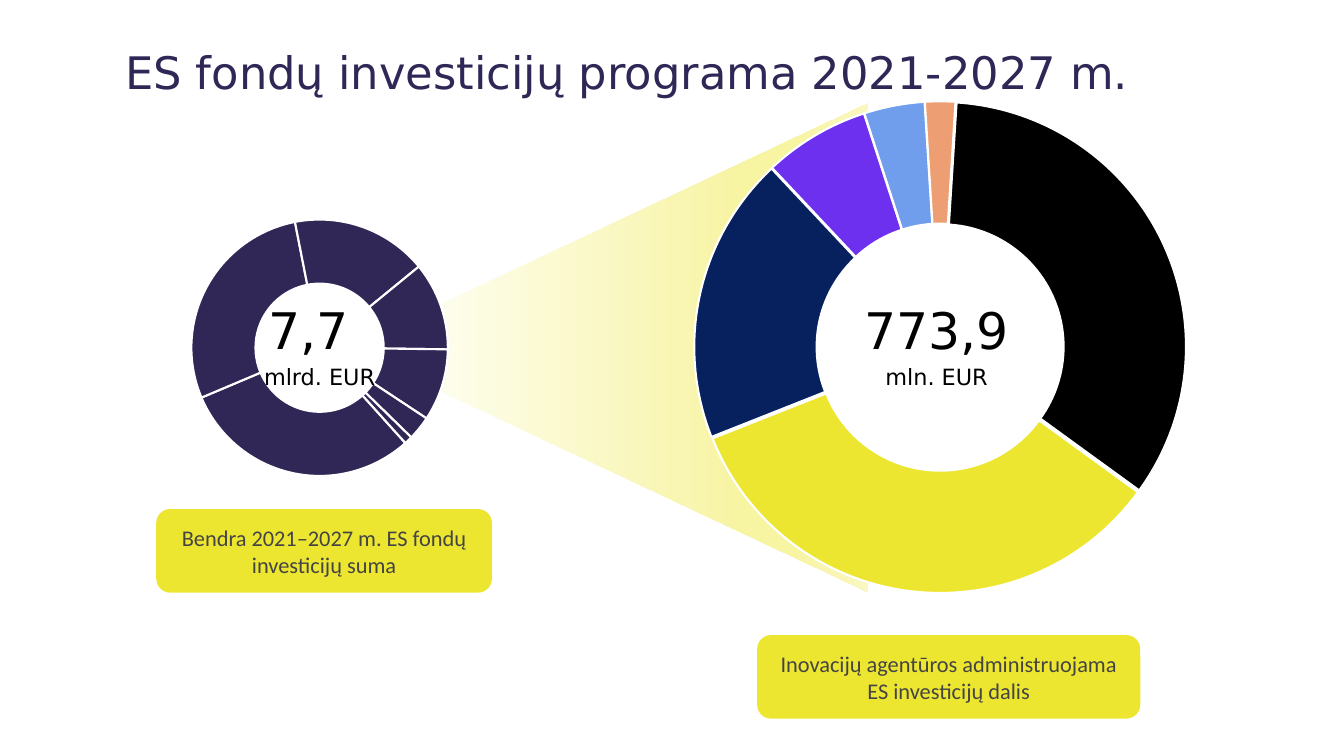
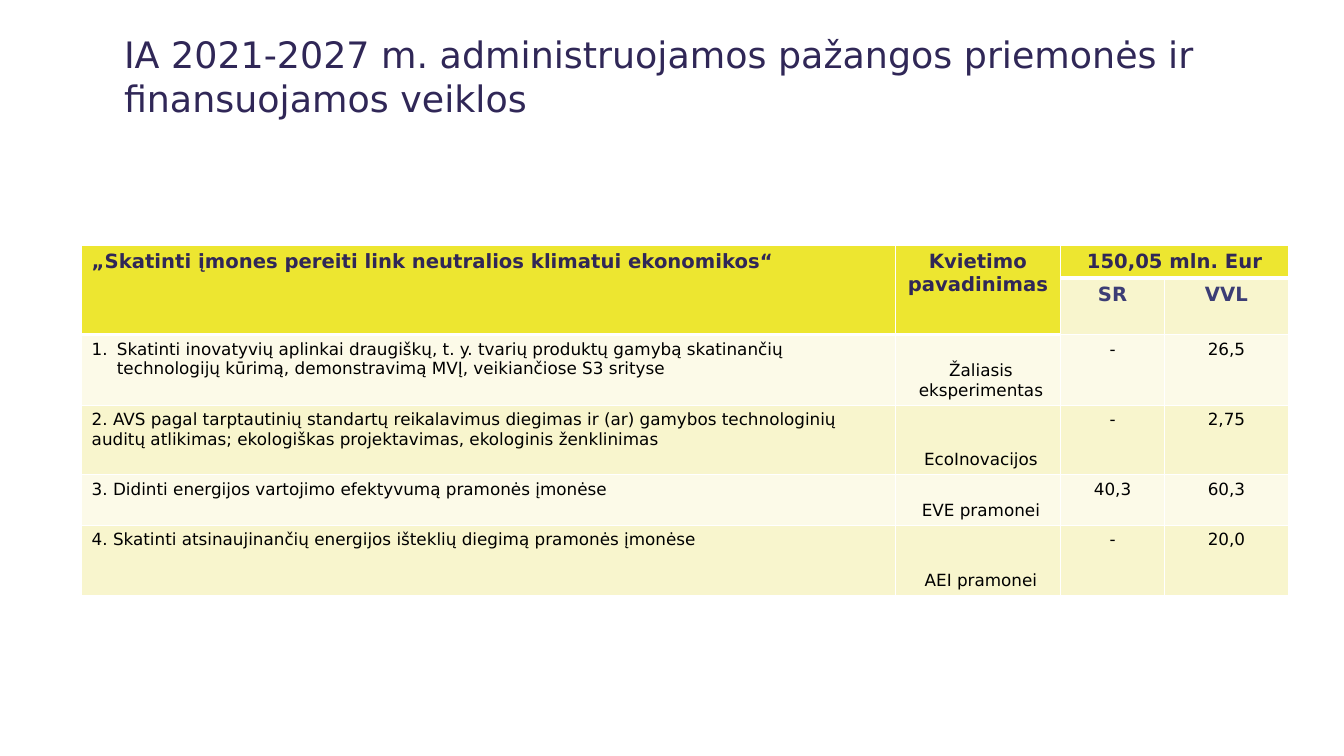
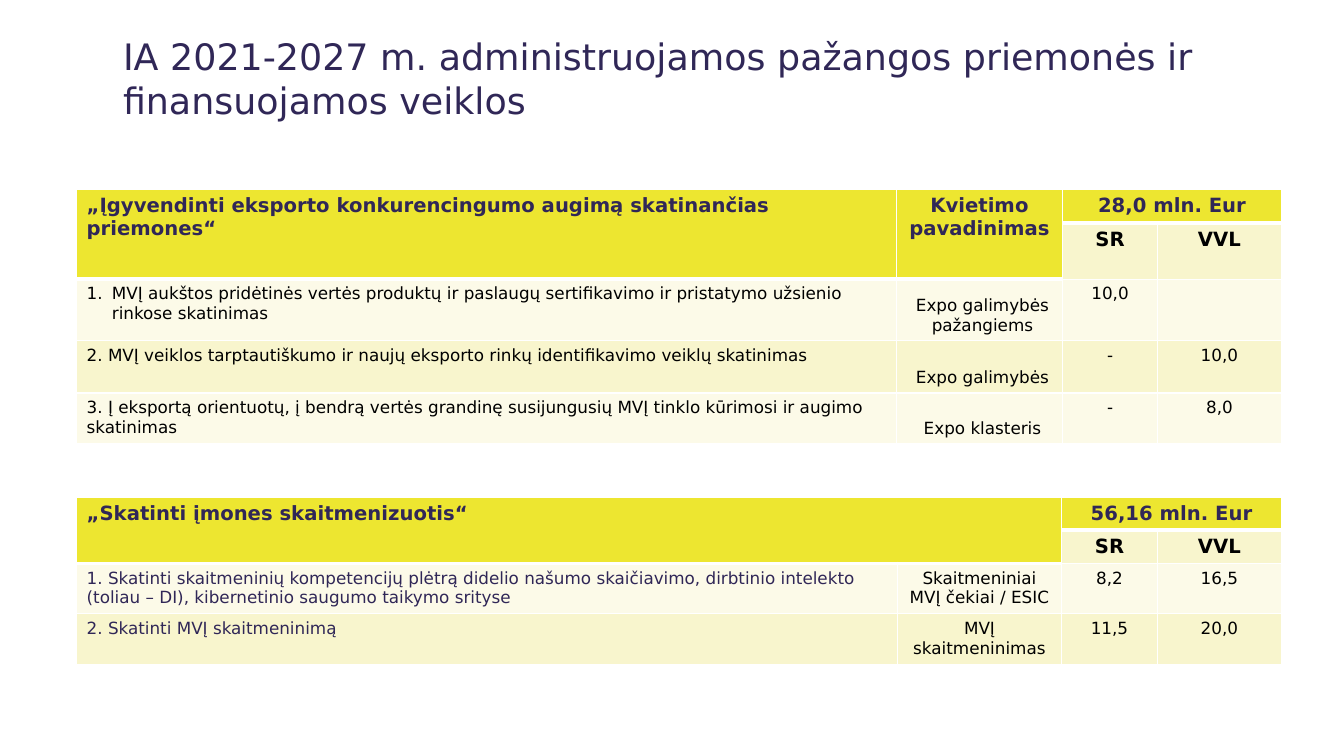
from dataclasses import dataclass

from lxml import etree
from pptx import Presentation
from pptx.chart.data import CategoryChartData
from pptx.dml.color import RGBColor
from pptx.enum.chart import XL_CHART_TYPE
from pptx.enum.shapes import MSO_SHAPE
from pptx.enum.text import MSO_ANCHOR, MSO_AUTO_SIZE, PP_ALIGN
from pptx.oxml.ns import qn
from pptx.util import Pt

PX = 9144  # EMU per px, 100 px to the inch


@dataclass(frozen=True)
class Theme:
    sans: str = "DejaVu Sans"
    label_font: str = "Calibri"
    navy: str = "302757"
    indigo: str = "3C3D75"
    yellow: str = "EDE630"
    band_dark: str = "F8F5CD"
    band_light: str = "FCFAE8"
    grey: str = "444444"
    black: str = "000000"
    white: str = "FFFFFF"
    beam: tuple = ((0, "FEFEF5"), (74, "F7F4A2"), (83, "F7F4A2"), (100, "FAF7C1"))
    shares: tuple = ("EDE630", "07215E", "6C30EE", "709DEC", "ED9E72", "000000")
    title: int = 26
    title_large: int = 32
    figure: int = 36
    figure_gap: int = 48
    label: int = 16
    head: int = 14
    body: int = 12
    chart: int = 10


T = Theme()


def box(*lengths):
    return [n * PX for n in lengths]


def rgb(hex_color):
    return RGBColor.from_string(hex_color)


def child(parent, tag, **attrs):
    return etree.SubElement(parent, qn(tag), {k: str(v) for k, v in attrs.items()})


def add_text(p, text, size=T.body, color=T.black, font=T.sans, bold=False, align=PP_ALIGN.LEFT):
    p.alignment = align
    r = p.add_run()
    r.text = text
    r.font.name, r.font.size, r.font.bold = font, Pt(size), bold
    r.font.color.rgb = rgb(color)


def number_item(p):
    pPr = p._p.get_or_add_pPr()
    pPr.set("marL", "228600")
    pPr.set("indent", "-228600")
    child(pPr, "a:buAutoNum", type="arabicPeriod")


def cell_borders(cell, bottom):
    tcPr = cell._tc.get_or_add_tcPr()
    for i, side in enumerate("LRTB"):
        width = bottom if side == "B" else 1
        ln = child(tcPr, f"a:ln{side}", w=Pt(width))
        child(child(ln, "a:solidFill"), "a:srgbClr", val=T.white)
        tcPr.insert(i, ln)


class Deck:
    def __init__(self):
        self.prs = Presentation()
        self.prs.slide_width, self.prs.slide_height = box(1333, 750)
        self.s = None

    def slide(self, title, x, y, width, size=T.title):
        self.s = self.prs.slides.add_slide(self.prs.slide_layouts[5])
        sp = self.s.shapes.title
        sp.left, sp.top, sp.width, sp.height = box(x, y, width, 97)
        tf = sp.text_frame
        tf.auto_size, tf.word_wrap = MSO_AUTO_SIZE.NONE, True
        tf.vertical_anchor = MSO_ANCHOR.TOP
        add_text(tf.paragraphs[0], title, size=size, color=T.navy)

    def shape(self, kind, at, fill=None):
        sp = self.s.shapes.add_shape(kind, *box(*at))
        sp.shadow.inherit = False
        sp.line.fill.background()
        if fill:
            sp.fill.solid()
            sp.fill.fore_color.rgb = rgb(fill)
        return sp

    def beam(self, at):
        sp = self.shape(MSO_SHAPE.TRAPEZOID, at)
        sp.adjustments[0] = 0.47
        sp.rotation = 270
        sp.fill.gradient()
        sp.fill.gradient_angle = 270
        stops = sp._element.spPr.find(".//" + qn("a:gsLst"))
        for gs in list(stops):
            stops.remove(gs)
        for pos, color in T.beam:
            child(child(stops, "a:gs", pos=pos * 1000), "a:srgbClr", val=color)

    def label(self, at, *lines):
        tf = self.shape(MSO_SHAPE.ROUNDED_RECTANGLE, at, T.yellow).text_frame
        tf.word_wrap, tf.vertical_anchor = True, MSO_ANCHOR.MIDDLE
        for i, line in enumerate(lines):
            p = tf.add_paragraph() if i else tf.paragraphs[0]
            add_text(p, line, size=T.label, color=T.grey, font=T.label_font, align=PP_ALIGN.CENTER)

    def figure(self, at, number, unit):
        tf = self.s.shapes.add_textbox(*box(*at)).text_frame
        tf.word_wrap = True
        p = tf.paragraphs[0]
        add_text(p, number, size=T.figure, align=PP_ALIGN.CENTER)
        add_text(p, " ", size=T.figure_gap, align=PP_ALIGN.CENTER)
        add_text(tf.add_paragraph(), unit, size=T.label, align=PP_ALIGN.CENTER)

    def doughnut(self, at, values, colors, start, hole, explode=0, layout=None):
        data = CategoryChartData()
        data.categories = [str(i + 1) for i in range(len(values))]
        data.add_series("Series 1", values)
        chart = self.s.shapes.add_chart(XL_CHART_TYPE.DOUGHNUT, *box(*at), data).chart
        chart.has_legend = chart.has_title = False
        chart.font.name, chart.font.size = T.label_font, Pt(T.chart)
        chart.font.color.rgb = rgb(T.black)
        plot = chart.plots[0]
        plot.vary_by_categories = True
        for i, color in enumerate(colors):
            fmt = plot.series[0].points[i].format
            fmt.fill.solid()
            fmt.fill.fore_color.rgb = rgb(color)
            fmt.line.color.rgb = rgb(T.white)
            fmt.line.width = Pt(1.5)
        # Ring geometry
        area = chart._chartSpace.find(".//" + qn("c:plotArea"))
        area.find(".//" + qn("c:firstSliceAng")).set("val", str(start))
        area.find(".//" + qn("c:holeSize")).set("val", str(hole))
        if explode:
            ser = area.find(".//" + qn("c:ser"))
            ser.find(qn("c:dPt")).addprevious(child(ser, "c:explosion", val=explode))
        if layout:
            old = area.find(qn("c:layout"))
            if old is not None:
                area.remove(old)
            frame = child(area, "c:layout")
            area.insert(0, frame)
            manual = child(frame, "c:manualLayout")
            child(manual, "c:layoutTarget", val="inner")
            child(manual, "c:xMode", val="edge")
            child(manual, "c:yMode", val="edge")
            for key, val in zip("xywh", layout):
                child(manual, f"c:{key}", val=val)

    def table(self, x, y, cols, rows, title, total, body, call=None,
              sub_color=T.black, item_color=T.black):
        """Two header rows, then rows of (activity, call, SR, VVL)."""
        at = box(x, y, sum(cols), sum(rows))
        tbl = self.s.shapes.add_table(len(rows), len(cols), *at).table
        tbl.first_row = tbl.horz_banding = False
        for col, width in zip(tbl.columns, cols):
            col.width = width * PX
        for row, height in zip(tbl.rows, rows):
            row.height = height * PX
        tbl.cell(0, 0).merge(tbl.cell(1, 0 if call else 1))
        if call:
            tbl.cell(0, 1).merge(tbl.cell(1, 1))
        tbl.cell(0, 2).merge(tbl.cell(0, 3))

        grid = [(title, call, total, ""), ("", "", "SR", "VVL"), *body]
        for i, texts in enumerate(grid):
            for j, text in enumerate(texts):
                cell = tbl.cell(i, j)
                header = i == 0 or (i == 1 and j < 2)
                cell.fill.solid()
                band = T.band_light if i % 2 == 0 else T.band_dark
                cell.fill.fore_color.rgb = rgb(T.yellow if header else band)
                cell_borders(cell, 3 if header else 1)
                if i > 1 and j == 1 and call:
                    cell.vertical_anchor = MSO_ANCHOR.BOTTOM
                    (cell.margin_left, cell.margin_top,
                     cell.margin_right, cell.margin_bottom) = box(7, 1, 1, 5)
                if not text:
                    continue
                p = cell.text_frame.paragraphs[0]
                if i == 2 and j == 0 and not text.startswith("1."):
                    number_item(p)
                if i < 2:
                    color = sub_color if i else T.navy
                else:
                    color = T.black if j else item_color
                add_text(p, text, size=T.head if i < 2 else T.body, color=color, bold=i < 2,
                         align=PP_ALIGN.CENTER if j else PP_ALIGN.LEFT)


def main():
    d = Deck()
    measures = "IA 2021-2027 m. administruojamos pažangos priemonės ir finansuojamos veiklos"
    call = "Kvietimo pavadinimas"

    # Slide 1: fund total and the agency's share
    d.slide("ES fondų investicijų programa 2021-2027 m.", 114, 39, 1170, T.title_large)
    d.beam((389, 115, 485, 460))
    d.shape(MSO_SHAPE.OVAL, (748, 176, 339, 339), T.white)
    d.doughnut((575, 85, 708, 519), (34, 19, 7, 4, 2, 34), T.shares, start=126, hole=70,
               explode=1, layout=(0.16, 0.03, 0.69, 0.94))
    d.doughnut((102, 204, 430, 282), (30, 28, 17, 11, 9, 3, 1, 0), [T.navy] * 8,
               start=138, hole=64)
    d.figure((234, 275, 166, 121), "7,7", "mlrd. EUR")
    d.figure((846, 275, 166, 121), "773,9", "mln. EUR")
    d.label((155, 505, 333, 83), "Bendra 2021–2027 m. ES fondų", "investicijų suma")
    d.label((751, 630, 380, 83), "Inovacijų agentūros administruojama ES investicijų dalis")

    # Slide 2: climate-neutral economy
    d.slide(measures, 113, 27, 1155)
    d.table(81, 243, (807, 164, 103, 123), (33, 56, 70, 69, 50, 70),
            "„Skatinti įmones pereiti link neutralios klimatui ekonomikos“", "150,05 mln. Eur", [
                ("Skatinti inovatyvių aplinkai draugiškų, t. y. tvarių produktų gamybą skatinančių "
                 "technologijų kūrimą, demonstravimą MVĮ, veikiančiose S3 srityse",
                 "Žaliasis eksperimentas", "-", "26,5"),
                ("2. AVS pagal tarptautinių standartų reikalavimus diegimas ir (ar) gamybos "
                 "technologinių auditų atlikimas; ekologiškas projektavimas, ekologinis ženklinimas",
                 "EcoInovacijos", "-", "2,75"),
                ("3. Didinti energijos vartojimo efektyvumą pramonės įmonėse",
                 "EVE pramonei", "40,3", "60,3"),
                ("4. Skatinti atsinaujinančių energijos išteklių diegimą pramonės įmonėse",
                 "AEI pramonei", "-", "20,0"),
            ], call=call, sub_color=T.indigo)

    # Slide 3: export and digitalisation
    d.slide(measures, 112, 29, 1155)
    d.table(76, 188, (813, 165, 94, 123), (33, 56, 61, 52, 50),
            "„Įgyvendinti eksporto konkurencingumo augimą skatinančias priemones“",
            "28,0 mln. Eur", [
                ("MVĮ aukštos pridėtinės vertės produktų ir paslaugų sertifikavimo ir pristatymo "
                 "užsienio rinkose skatinimas", "Expo galimybės pažangiems", "10,0", ""),
                ("2. MVĮ veiklos tarptautiškumo ir naujų eksporto rinkų identifikavimo veiklų "
                 "skatinimas", "Expo galimybės", "-", "10,0"),
                ("3. Į eksportą orientuotų, į bendrą vertės grandinę susijungusių MVĮ tinklo "
                 "kūrimosi ir augimo skatinimas", "Expo klasteris", "-", "8,0"),
            ], call=call)
    d.table(76, 493, (814, 163, 95, 123), (33, 33, 50, 50),
            "„Skatinti įmones skaitmenizuotis“", "56,16 mln. Eur", [
                ("1. Skatinti skaitmeninių kompetencijų plėtrą didelio našumo skaičiavimo, "
                 "dirbtinio intelekto (toliau – DI), kibernetinio saugumo taikymo srityse",
                 "Skaitmeniniai MVĮ čekiai / ESIC", "8,2", "16,5"),
                ("2. Skatinti MVĮ skaitmeninimą", "MVĮ skaitmeninimas", "11,5", "20,0"),
            ], item_color=T.navy)

    d.prs.save("out.pptx")


if __name__ == "__main__":
    main()
